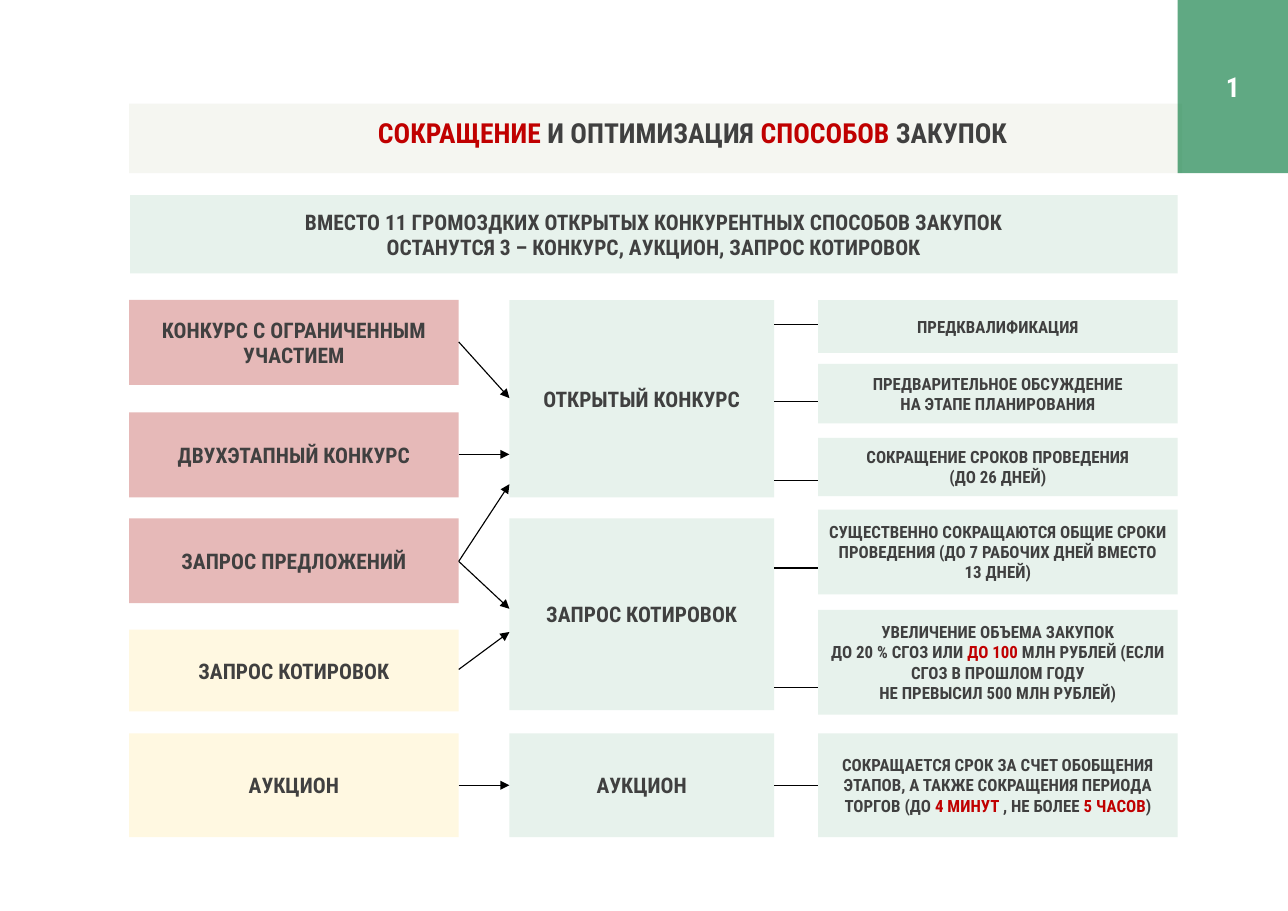
from lxml import etree
from pptx import Presentation
from pptx import util as u
from pptx.dml import color
from pptx.enum import shapes, text
from pptx.oxml import ns

FONT = "Roboto Condensed"
DARK, RED, WHITE, BLACK = "404040", "C00000", "FFFFFF", "000000"
MINT, PINK, CREAM, BAND, GREEN = "E7F2EC", "E6B9B8", "FFF8E1", "F5F6F1", "077A3E"


def paint(fmt, rgb):
    fmt.solid()
    fmt.fore_color.rgb = color.RGBColor.from_string(rgb)


def write(tf, content, size, rgb=DARK):
    tf.word_wrap = True
    for i, para in enumerate(content.split("\n")):
        p = tf.paragraphs[0] if i == 0 else tf.add_paragraph()
        p.alignment = text.PP_ALIGN.CENTER
        for j, part in enumerate(para.split("|")):
            for k, line in enumerate(part.split("\v")):
                if k:
                    p.add_line_break()
                if not line:
                    continue
                r = p.add_run()
                r.text = line
                r.font.name, r.font.size, r.font.bold = FONT, u.Pt(size), True
                paint(r.font.fill, RED if j % 2 else rgb)


def add_box(sl, x, y, w, h, fill, content, size, rgb=DARK):
    sp = sl.shapes.add_shape(shapes.MSO_SHAPE.RECTANGLE, *map(u.Inches, (x, y, w, h)))
    sp.shadow.inherit = False
    paint(sp.fill, fill)
    sp.line.fill.background()
    sp.text_frame.vertical_anchor = text.MSO_ANCHOR.MIDDLE
    write(sp.text_frame, content, size, rgb)
    return sp


def add_line(sl, x1, y1, x2, y2, arrow=False):
    cx = sl.shapes.add_connector(shapes.MSO_CONNECTOR.STRAIGHT, *map(u.Inches, (x1, y1, x2, y2)))
    paint(cx.line.fill, BLACK)
    cx.line.width = u.Pt(0.75)
    if arrow:
        ln = cx.line.fill._xPr
        etree.SubElement(ln, ns.qn("a:tailEnd"), type="triangle")
    etree.SubElement(cx._element.spPr, ns.qn("a:effectLst"))


def add_title(sl, x, y, w, h):
    sp = sl.shapes.title
    sp.left, sp.top, sp.width, sp.height = map(u.Inches, (x, y, w, h))
    paint(sp.fill, BAND)
    tf = sp.text_frame
    tf.auto_size = text.MSO_AUTO_SIZE.NONE
    tf.vertical_anchor = text.MSO_ANCHOR.TOP
    tf.margin_left, tf.margin_right, tf.margin_top = map(u.Inches, (1.07, 0.4, 0.11))
    write(tf, "|СОКРАЩЕНИЕ |И ОПТИМИЗАЦИЯ |СПОСОБОВ| ЗАКУПОК", 18)


def add_page_badge(sl, x, y, w, h):
    sp = add_box(sl, x, y, w, h, GREEN, "1", 18, WHITE)
    clr = sp.fill._xPr.find(ns.qn("a:solidFill"))[0]
    etree.SubElement(clr, ns.qn("a:alpha"), val="64000")


def add_column(sl, x, y, w, size, rows):
    for dy, h, fill, content in rows:
        add_box(sl, x, y + dy, w, h, fill, content, size)


def add_scheme(sl, x, y, w):
    old_w, new_w, gain_w = 2.99, 2.4, 3.26
    new_x, gain_x = x + 3.45, x + w - gain_w
    add_column(sl, x, y, old_w, 14, [
        (0, 0.77, PINK, "КОНКУРС С ОГРАНИЧЕННЫМ УЧАСТИЕМ"),
        (1.02, 0.77, PINK, "ДВУХЭТАПНЫЙ КОНКУРС"),
        (1.98, 0.77, PINK, "ЗАПРОС ПРЕДЛОЖЕНИЙ"),
        (2.99, 0.74, CREAM, "ЗАПРОС КОТИРОВОК"),
        (3.93, 0.94, CREAM, "АУКЦИОН"),
    ])
    add_column(sl, new_x, y, new_w, 14, [
        (0, 1.79, MINT, "ОТКРЫТЫЙ КОНКУРС"),
        (1.98, 1.74, MINT, "ЗАПРОС КОТИРОВОК"),
        (3.93, 0.94, MINT, "АУКЦИОН"),
    ])
    add_column(sl, gain_x, y, gain_w, 11, [
        (0, 0.48, MINT, "ПРЕДКВАЛИФИКАЦИЯ"),
        (0.58, 0.54, MINT, "ПРЕДВАРИТЕЛЬНОЕ ОБСУЖДЕНИЕ\vНА ЭТАПЕ ПЛАНИРОВАНИЯ"),
        (1.25, 0.53, MINT, "СОКРАЩЕНИЕ СРОКОВ ПРОВЕДЕНИЯ\v(ДО 26 ДНЕЙ)"),
        (1.9, 0.77, MINT, "СУЩЕСТВЕННО СОКРАЩАЮТСЯ ОБЩИЕ СРОКИ ПРОВЕДЕНИЯ "
                          "(ДО 7 РАБОЧИХ ДНЕЙ ВМЕСТО 13 ДНЕЙ)"),
        (2.81, 0.95, MINT, "УВЕЛИЧЕНИЕ ОБЪЕМА ЗАКУПОК\vДО 20 % СГОЗ ИЛИ |ДО 100 |МЛН РУБЛЕЙ "
                           "(ЕСЛИ СГОЗ В ПРОШЛОМ ГОДУ\nНЕ ПРЕВЫСИЛ 500 МЛН РУБЛЕЙ)"),
        (3.93, 0.94, MINT, "СОКРАЩАЕТСЯ СРОК ЗА СЧЕТ ОБОБЩЕНИЯ ЭТАПОВ, А ТАКЖЕ СОКРАЩЕНИЯ "
                           "ПЕРИОДА ТОРГОВ (ДО |4 МИНУТ |, НЕ БОЛЕЕ |5 ЧАСОВ|)"),
    ])
    for start, end in [(0.38, 0.89), (1.4, 1.4), (2.37, 1.67), (2.37, 2.8), (3.35, 3.01), (4.4, 4.4)]:
        add_line(sl, x + old_w, y + start, new_x, y + end, arrow=True)
    for dy in (0.22, 0.92, 1.64, 2.43, 3.51, 4.4):
        add_line(sl, new_x + new_w, y + dy, gain_x, y + dy)


def main():
    prs = Presentation()
    prs.slide_width, prs.slide_height = u.Inches(11.68), u.Inches(8.26)
    sl = prs.slides.add_slide(prs.slide_layouts[5])
    add_title(sl, 1.17, 0.94, 9.55, 0.63)
    add_page_badge(sl, 10.68, 0, 1, 1.57)
    add_box(sl, 1.18, 1.77, 9.5, 0.71, MINT,
            "ВМЕСТО 11 ГРОМОЗДКИХ ОТКРЫТЫХ КОНКУРЕНТНЫХ СПОСОБОВ ЗАКУПОК\v"
            "ОСТАНУТСЯ 3 – КОНКУРС, АУКЦИОН, ЗАПРОС КОТИРОВОК", 14)
    add_scheme(sl, 1.17, 2.72, 9.51)
    prs.save("out.pptx")


if __name__ == "__main__":
    main()
